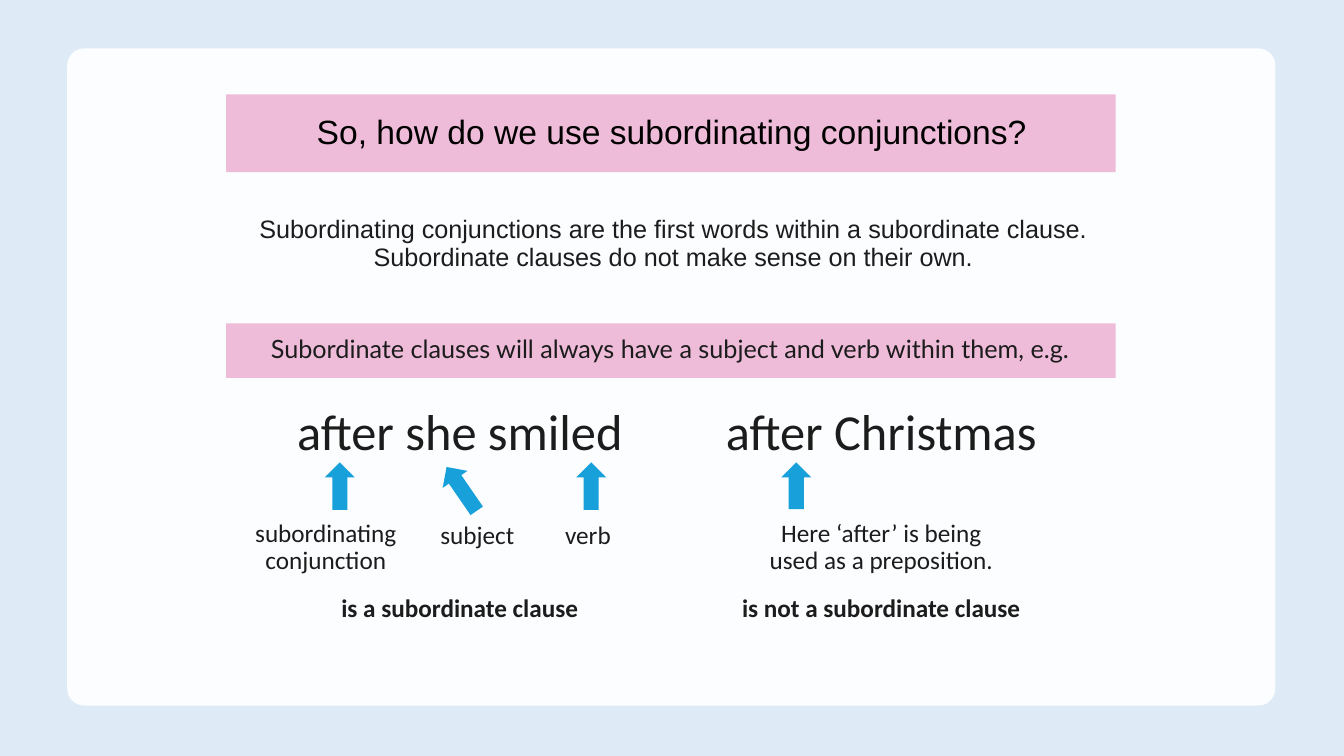
"""Build a slide on how subordinating conjunctions are used."""
from lxml.etree import SubElement
from pptx import Presentation
from pptx.dml.color import RGBColor
from pptx.enum.shapes import MSO_SHAPE as Shape
from pptx.enum.text import MSO_ANCHOR as Anchor, PP_ALIGN as Align
from pptx.oxml.ns import qn
from pptx.util import Pt

COLOURS = {
    "background": "DEEBF7",
    "panel": "FFFFFF",
    "bar": "EEBCD9",
    "arrow": "18A0DB",
    "title": "000000",
    "text": "1C1C1C",
}


def add_block(kind, box, fill=None):
    block = slide.shapes.add_shape(kind, *[Pt(length) for length in box])
    block.shadow.inherit = False
    block.line.fill.background()
    if fill:
        block.fill.solid()
        block.fill.fore_color.rgb = RGBColor.from_string(COLOURS[fill])
    else:
        block.fill.background()
    return block


def write(holder, text, size=18, font="Calibri", bold=False, colour="text"):
    frame = holder.text_frame
    frame.word_wrap = True
    frame.vertical_anchor = Anchor.MIDDLE
    paragraph = frame.paragraphs[0]
    paragraph.text = text
    paragraph.alignment = Align.CENTER
    paragraph.line_spacing = 0.9
    for run in paragraph.runs:
        run.font.size = Pt(size)
        run.font.name = font
        run.font.bold = bold
        run.font.color.rgb = RGBColor.from_string(COLOURS[colour])


deck = Presentation()
deck.slide_width, deck.slide_height = Pt(960), Pt(540)
slide = deck.slides.add_slide(deck.slide_layouts[5])
slide.background.fill.solid()
slide.background.fill.fore_color.rgb = RGBColor.from_string(COLOURS["background"])

panel = add_block(Shape.ROUNDED_RECTANGLE, (48, 34.5, 863, 469.5), "panel")
panel.adjustments[0] = 0.026
panel_colour = panel.fill.fore_color._xFill.find(qn("a:srgbClr"))
SubElement(panel_colour, qn("a:alpha"), val="90000")

for top, height in ((231, 39), (67.5, 55.5)):
    title_bar = add_block(Shape.RECTANGLE, (161.5, top, 635.5, height), "bar")

title = slide.shapes.title
title.left, title.top, title.width, title.height = Pt(159), Pt(73), Pt(641.5), Pt(45)
write(title, "So, how do we use subordinating conjunctions?",
      size=24, font="Arial", colour="title")
title_bar.element.addnext(title.element)

LEFT, RIGHT, COLUMN = 178.5, 479.5, 300
passages = [
    ("Subordinating conjunctions are the first words within a subordinate clause. "
     "Subordinate clauses do not make sense on their own.",
     (113, 129.5, 736, 90), {"font": "Arial"}),
    ("Subordinate clauses will always have a subject and verb within them, e.g.",
     (157.5, 235.5, 642.5, 29.5), {"font": "Lato"}),
    ("after she smiled", (LEFT, 265.5, COLUMN, 90), {"size": 36}),
    ("after Christmas", (RIGHT, 289.5, COLUMN, 42), {"size": 36}),
    ("is a subordinate clause", (LEFT, 420, COLUMN, 31), {"bold": True}),
    ("is not a subordinate clause", (RIGHT, 420, COLUMN, 31), {"bold": True}),
    ("verb", (370, 363.5, 100, 39), {}),
    ("subject", (291, 363.5, 100, 39), {}),
    ("subordinating conjunction", (155, 372, 155.5, 39), {}),
    ("Here ‘after’ is being\nused as a preposition.", (RIGHT, 376, COLUMN, 31), {}),
]
for text, box, style in passages:
    passage = add_block(Shape.ROUNDED_RECTANGLE, box)
    passage.adjustments[0] = 0.096
    frame = passage.text_frame
    frame.margin_left = frame.margin_right = Pt(20)
    frame.margin_top = frame.margin_bottom = Pt(20)
    write(passage, text, **style)

for left, height, angle in ((411.5, 34, 180), (319, 38, 145.5),
                            (232, 34, 180), (558, 33.5, 180)):
    arrow = add_block(Shape.DOWN_ARROW, (left, 330.25, 21.5, height), "arrow")
    arrow.rotation = angle

deck.save("out.pptx")
